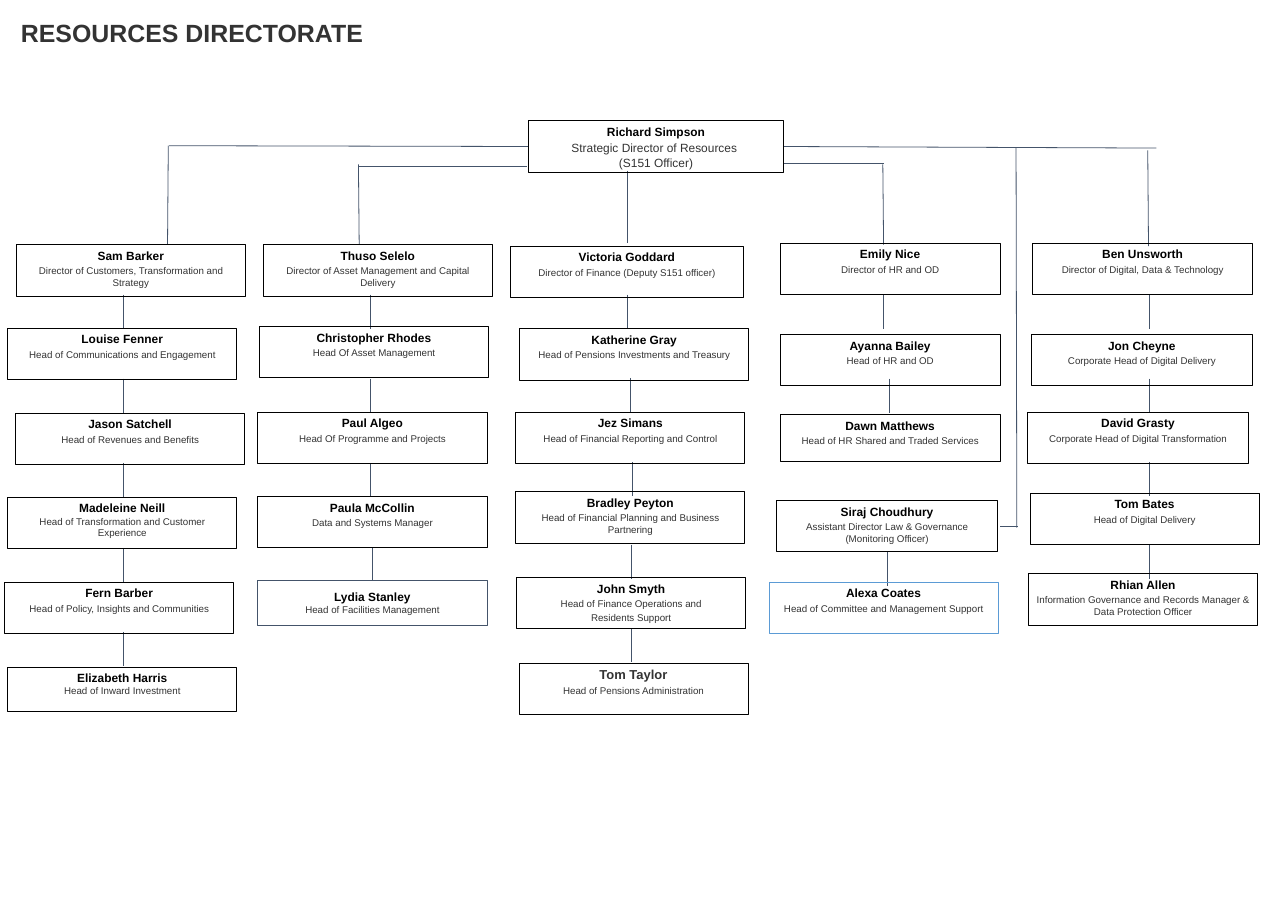
from pptx import Presentation
from pptx.dml.color import RGBColor
from pptx.enum.shapes import MSO_CONNECTOR, MSO_SHAPE
from pptx.enum.text import MSO_ANCHOR, PP_ALIGN
from pptx.oxml.ns import qn
from pptx.util import Pt
from lxml.etree import SubElement

PX = 9144  # 100 px to the inch
BLACK = RGBColor(0x00, 0x00, 0x00)
WHITE = RGBColor(0xFF, 0xFF, 0xFF)
CHARCOAL = RGBColor(0x33, 0x33, 0x33)
SLATE = RGBColor(0x44, 0x54, 0x6A)
BLUE = RGBColor(0x5B, 0x9B, 0xD5)

deck = Presentation()
deck.slide_width, deck.slide_height = 1653 * PX, 1169 * PX
slide = deck.slides.add_slide(deck.slide_layouts[6])


def add_line(x1, y1, x2, y2):
    line = slide.shapes.add_connector(
        MSO_CONNECTOR.STRAIGHT, x1 * PX, y1 * PX, x2 * PX, y2 * PX)
    line.line.color.rgb = SLATE
    line.line.width = Pt(0.75)
    SubElement(line._element.spPr, qn("a:effectLst"))


def add_post(left, top, width, name, role, height=66, outline=BLACK, fill=None,
             name_size=11, name_color=BLACK, role_size=9, gap=2, inset=5,
             anchor=MSO_ANCHOR.TOP):
    box = slide.shapes.add_shape(
        MSO_SHAPE.RECTANGLE, left * PX, top * PX, width * PX, height * PX)
    box.shadow.inherit = False
    if fill is None:
        box.fill.background()
    else:
        box.fill.solid()
        box.fill.fore_color.rgb = fill
    box.line.color.rgb = outline
    box.line.width = Pt(0.75)
    frame = box.text_frame
    frame.word_wrap = True
    frame.vertical_anchor = anchor
    frame.margin_left = frame.margin_right = 10 * PX
    frame.margin_top = frame.margin_bottom = inset * PX
    frame.text = f"{name}\n{role}"
    for i, paragraph in enumerate(frame.paragraphs):
        paragraph.alignment = PP_ALIGN.CENTER
        paragraph.space_before = Pt(gap if i else 0)
        paragraph.font.name = "Arial"
        paragraph.font.bold = i == 0
        paragraph.font.size = Pt(role_size if i else name_size)
        paragraph.font.color.rgb = CHARCOAL if i else name_color


# Title
title = slide.shapes.add_textbox(17 * PX, 17 * PX, 873 * PX, 95 * PX).text_frame
title.word_wrap = True
title.margin_left = title.margin_right = 10 * PX
title.margin_top = title.margin_bottom = 10 * PX
heading = title.paragraphs[0]
heading.text = "RESOURCES DIRECTORATE"
heading.line_spacing = 0.9
heading.font.name = "Arial"
heading.font.size = Pt(23)
heading.font.bold = True
heading.font.color.rgb = CHARCOAL

# Lines from the strategic director to the directors
for ends in [
    (217, 187, 678, 188), (216, 187, 215, 314),
    (460, 213, 677, 213), (460, 211, 461, 314),
    (805, 219, 805, 312),
    (1006, 210, 1134, 210), (1133, 211, 1134, 314),
    (1006, 188, 1484, 190), (1473, 193, 1474, 316),
    (1304, 189, 1305, 677), (1284, 675, 1307, 675),
]:
    add_line(*ends)

# Lines down each reporting chain: x, top
for x, top in [
    (159, 378), (159, 486), (159, 594), (159, 703), (159, 811),
    (475, 378), (475, 486), (475, 594), (478, 702),
    (805, 378), (809, 485), (812, 593), (810, 699), (810, 806),
    (1134, 378), (1142, 486), (1139, 708),
    (1475, 378), (1475, 486), (1475, 593), (1475, 699),
]:
    add_line(x, top, x, top + 44)

# Strategic director
add_post(678, 155, 328, "Richard Simpson",
         "Strategic Director of Resources \v(S151 Officer)", role_size=11)

# Posts by column: left, top, width, name, role
posts = [
    # Customers, transformation and strategy
    (21, 314, 294, "Sam Barker", "Director of Customers, Transformation and Strategy"),
    (10, 421, 294, "Louise Fenner", "Head of Communications and Engagement"),
    (20, 530, 294, "Jason Satchell", "Head of Revenues and Benefits"),
    (10, 638, 294, "Madeleine Neill", "Head of Transformation and Customer Experience"),
    (6, 747, 294, "Fern Barber", "Head of Policy, Insights and Communities"),
    (10, 856, 294, "Elizabeth Harris", "Head of Inward Investment"),
    # Asset management and capital delivery
    (338, 314, 294, "Thuso Selelo", "Director of Asset Management and Capital Delivery"),
    (333, 419, 294, "Christopher Rhodes", "Head Of Asset Management"),
    (331, 529, 294, "Paul Algeo", "Head Of Programme and Projects"),
    (331, 637, 294, "Paula McCollin", "Data and Systems Manager"),
    (331, 745, 294, "Lydia Stanley", "Head of Facilities Management"),
    # Finance
    (655, 316, 299, "Victoria Goddard", "Director of Finance (Deputy S151 officer)"),
    (667, 422, 294, "Katherine Gray", "Head of Pensions Investments and Treasury"),
    (662, 529, 294, "Jez Simans", "Head of Financial Reporting and Control"),
    (662, 631, 294, "Bradley Peyton", "Head of Financial Planning and Business Partnering"),
    (663, 741, 294, "John Smyth", "Head of Finance Operations and\nResidents Support"),
    (666, 851, 294, "Tom Taylor", "Head of Pensions Administration"),
    # HR, law and governance
    (1001, 312, 283, "Emily Nice", "Director of HR and OD"),
    (1001, 429, 283, "Ayanna Bailey", "Head of HR and OD"),
    (1001, 532, 283, "Dawn Matthews", "Head of HR Shared and Traded Services"),
    (997, 642, 283, "Siraj Choudhury",
     "Assistant Director Law & Governance (Monitoring Officer)"),
    (987, 747, 294, "Alexa Coates", "Head of Committee and Management Support"),
    # Digital, data and technology
    (1325, 312, 283, "Ben Unsworth", "Director of Digital, Data & Technology"),
    (1324, 429, 283, "Jon Cheyne", "Corporate Head of Digital Delivery"),
    (1319, 529, 283, "David Grasty", "Corporate Head of Digital Transformation"),
    (1322, 633, 294, "Tom Bates", "Head of Digital Delivery"),
    (1320, 736, 294, "Rhian Allen",
     "Information Governance and Records Manager & Data Protection Officer"),
]
special_looks = {
    "Madeleine Neill": dict(gap=0),
    "Elizabeth Harris": dict(gap=0, height=57),
    "Lydia Stanley": dict(gap=0, height=57, outline=SLATE, fill=WHITE, inset=10,
                          anchor=MSO_ANCHOR.MIDDLE),
    "Tom Taylor": dict(name_size=12, name_color=CHARCOAL),
    "Dawn Matthews": dict(height=60),
    "Alexa Coates": dict(outline=BLUE),
}
for left, top, width, name, role in posts:
    add_post(left, top, width, name, role, **special_looks.get(name, {}))

deck.save("out.pptx")
